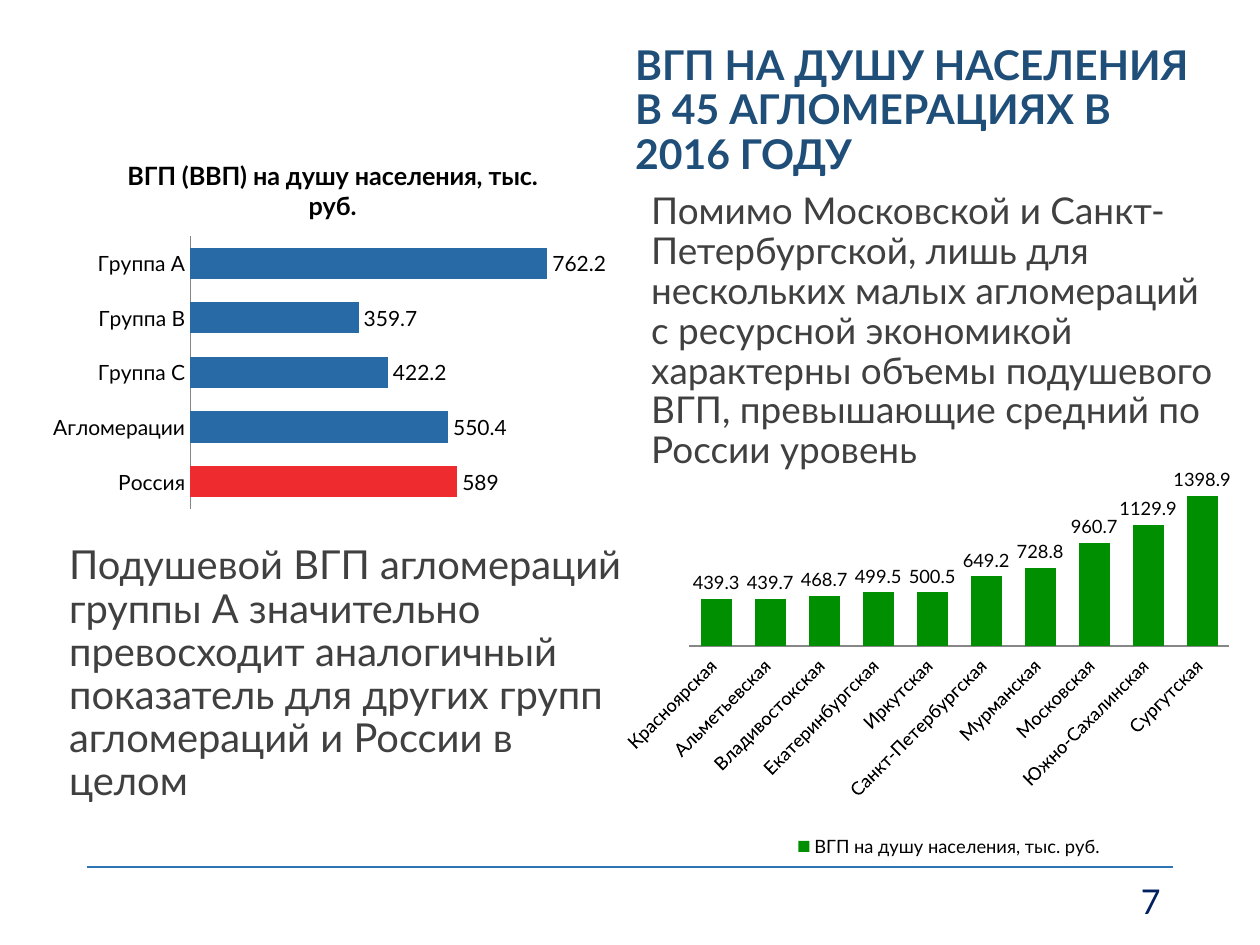
"""Build a slide on gross urban product per head in 45 agglomerations."""
from dataclasses import dataclass

from lxml import etree
from pptx import Presentation
from pptx.chart.chart import Chart
from pptx.chart.data import CategoryChartData
from pptx.dml.color import RGBColor
from pptx.enum.chart import XL_CHART_TYPE, XL_LABEL_POSITION, XL_LEGEND_POSITION, XL_TICK_LABEL_POSITION, XL_TICK_MARK
from pptx.enum.shapes import MSO_CONNECTOR
from pptx.enum.text import MSO_ANCHOR, MSO_AUTO_SIZE, PP_ALIGN
from pptx.oxml import parse_xml
from pptx.oxml.ns import nsdecls, qn
from pptx.util import Inches, Pt

BAR = XL_CHART_TYPE.BAR_CLUSTERED
COLUMN = XL_CHART_TYPE.COLUMN_CLUSTERED
OUTSIDE_END = XL_LABEL_POSITION.OUTSIDE_END
LEGEND_BOTTOM = XL_LEGEND_POSITION.BOTTOM
NEXT_TO_AXIS = XL_TICK_LABEL_POSITION.NEXT_TO_AXIS
NO_TICK = XL_TICK_MARK.NONE
STRAIGHT = MSO_CONNECTOR.STRAIGHT
TOP, MIDDLE = MSO_ANCHOR.TOP, MSO_ANCHOR.MIDDLE
LEFT, RIGHT = PP_ALIGN.LEFT, PP_ALIGN.RIGHT
NO_AUTOFIT = MSO_AUTO_SIZE.NONE

FONT = "Lato"
COLORS = {
    "title": "1F4E79", "body": "404040", "number": "002060", "rule": "2E75B6",
    "chart_text": "000000", "axis": "868686", "group": "276AA6",
    "russia": "EE2B2F", "city": "008F00",
}


@dataclass
class TextBlock:
    text: str
    box: tuple[float, float, float, float]
    size: float
    color: str
    bold: bool = False
    anchor: MSO_ANCHOR = TOP
    align: PP_ALIGN = LEFT
    line_spacing: float = 0.9


@dataclass
class ChartSpec:
    kind: XL_CHART_TYPE
    box: tuple[float, float, float, float]
    series_name: str
    values: dict[str, float]
    color: str
    size: float
    maximum: float


TITLE = TextBlock("ВГП НА ДУШУ НАСЕЛЕНИЯ В 45 АГЛОМЕРАЦИЯХ В 2016 ГОДУ",
                  (4.94, 0.29, 4.8, 1.19), 23.4, "title", bold=True, anchor=MIDDLE)
TEXTS = [
    TextBlock("Подушевой ВГП агломераций группы А значительно превосходит аналогичный "
              "показатель для других групп агломераций и России в целом",
              (0.45, 4.28, 4.62, 2.32), 22.8, "body"),
    TextBlock("Помимо Московской и Санкт-Петербургской, лишь для нескольких малых агломераций "
              "с ресурсной экономикой характерны объемы подушевого ВГП, превышающие средний "
              "по России уровень", (5.07, 1.48, 4.7, 2.44), 21.1, "body"),
    TextBlock("7", (7.06, 6.95, 2.25, 0.4), 19.5, "number",
              anchor=MIDDLE, align=RIGHT, line_spacing=1.0),
]
GROUPS = ChartSpec(
    BAR, (0.33, 1.1, 4.62, 3), "ВГП (ВВП) на душу населения, тыс. руб.",
    {"Россия": 570.1, "Агломерации": 550.4, "Группа С": 422.2,
     "Группа В": 359.7, "Группа А": 762.2}, "group", 12, 900)
CITIES = ChartSpec(
    COLUMN, (4.94, 3.6, 4.83, 3.25), "ВГП на душу населения, тыс. руб.",
    {"Красноярская ": 439.3, "Альметьевская ": 439.7, "Владивостокская ": 468.7,
     "Екатеринбургская ": 499.5, "Иркутская ": 500.5, "Санкт-Петербургская ": 649.2,
     "Мурманская ": 728.8, "Московская ": 960.7, "Южно-Сахалинская ": 1129.9,
     "Сургутская ": 1398.9}, "city", 10.5, 1600)
PLOT_LAYOUT = {"layoutTarget": "inner", "xMode": "edge", "yMode": "edge",
               "x": 0.11, "y": 0.05, "w": 0.89, "h": 0.42}
LEGEND_LAYOUT = {"xMode": "edge", "yMode": "edge", "x": 0.28, "y": 0.92}


def rgb(name: str) -> RGBColor:
    """Return a palette colour."""
    return RGBColor.from_string(COLORS[name])


def style_font(font, size: float, color: str, bold: bool = False) -> None:
    """Set the typeface, size, colour and weight of a font."""
    font.name, font.size, font.bold = FONT, Pt(size), bold
    font.color.rgb = rgb(color)


def fill_text(shape, block: TextBlock) -> None:
    """Place a text shape and format its paragraph."""
    shape.left, shape.top, shape.width, shape.height = map(Inches, block.box)
    frame = shape.text_frame
    frame.text = block.text
    frame.word_wrap, frame.auto_size = True, NO_AUTOFIT
    frame.vertical_anchor = block.anchor
    paragraph = frame.paragraphs[0]
    paragraph.alignment, paragraph.line_spacing = block.align, block.line_spacing
    style_font(paragraph.runs[0].font, block.size, block.color, block.bold)


def set_layout(element, settings: dict[str, str | float], index: int) -> None:
    """Give a chart part a manual layout as its child at the index."""
    for layout in element.findall(qn("c:layout")):
        element.remove(layout)
    values = "".join(f'<c:{tag} val="{value}"/>' for tag, value in settings.items())
    element.insert(index, parse_xml(
        f'<c:layout {nsdecls("c")}><c:manualLayout>{values}</c:manualLayout></c:layout>'))


def add_bars(slide, spec: ChartSpec) -> Chart:
    """Add a single-series chart with value labels and a hidden value axis."""
    data = CategoryChartData(number_format="0.0")
    data.categories = list(spec.values)
    data.add_series(spec.series_name, list(spec.values.values()))
    chart = slide.shapes.add_chart(spec.kind, *map(Inches, spec.box), data).chart
    style_font(chart.font, spec.size, "chart_text")
    chart.has_legend = chart.has_title = False
    value_axis, category_axis = chart.value_axis, chart.category_axis
    value_axis.visible = value_axis.has_major_gridlines = False
    value_axis.minimum_scale, value_axis.maximum_scale = 0, spec.maximum
    value_axis.major_tick_mark = value_axis.minor_tick_mark = NO_TICK
    category_axis.major_tick_mark = category_axis.minor_tick_mark = NO_TICK
    category_axis.tick_label_position = NEXT_TO_AXIS
    category_axis.format.line.color.rgb = rgb("axis")
    category_axis.format.line.width = Pt(0.75)
    plot = chart.plots[0]
    plot.gap_width, plot.vary_by_categories = 75, False
    series = plot.series[0]
    series.format.fill.solid()
    series.format.fill.fore_color.rgb = rgb(spec.color)
    labels = series.data_labels
    labels.show_value, labels.position = True, OUTSIDE_END
    labels.number_format, labels.number_format_is_linked = "0.0", False
    style_font(labels.font, spec.size, "chart_text")
    return chart


def add_groups(slide) -> None:
    """Add the titled group chart with Russia picked out."""
    chart = add_bars(slide, GROUPS)
    chart.has_title = True
    heading = chart.chart_title.text_frame
    heading.text = GROUPS.series_name
    style_font(heading.paragraphs[0].runs[0].font, 14.4, "chart_text", True)
    chart.plots[0].overlap = -25
    russia = chart.plots[0].series[0].points[0]
    russia.format.fill.solid()
    russia.format.fill.fore_color.rgb = rgb("russia")
    caption = russia.data_label.text_frame
    caption.text = "589"
    style_font(caption.paragraphs[0].runs[0].font, GROUPS.size, "chart_text")
    russia.data_label.position = OUTSIDE_END


def add_cities(slide) -> None:
    """Add the city chart with slanted names, a legend and a fixed plot area."""
    chart = add_bars(slide, CITIES)
    chart.has_legend = True
    chart.legend.position, chart.legend.include_in_layout = LEGEND_BOTTOM, False
    style_font(chart.legend.font, CITIES.size, "chart_text")
    category_axis = chart.category_axis
    style_font(category_axis.tick_labels.font, CITIES.size, "chart_text")
    category_axis._element.find(qn("c:txPr")).find(qn("a:bodyPr")).set("rot", "-2700000")
    set_layout(chart._chartSpace.chart.plotArea, PLOT_LAYOUT, 0)
    set_layout(chart.legend._element, LEGEND_LAYOUT, 1)


def add_rule(slide) -> None:
    """Add the footer rule."""
    rule = slide.shapes.add_connector(STRAIGHT, *map(Inches, (0.69, 6.88, 9.31, 6.88)))
    rule.line.color.rgb = rgb("rule")
    rule.line.width = Pt(1.2)
    etree.SubElement(rule._element.spPr, qn("a:effectLst"))


def main() -> None:
    """Build and save the slide."""
    deck = Presentation()
    deck.slide_width, deck.slide_height = Inches(10), Inches(7.5)
    slide = deck.slides.add_slide(deck.slide_layouts[5])
    add_rule(slide)
    fill_text(slide.shapes.title, TITLE)
    add_groups(slide)
    add_cities(slide)
    for block in TEXTS:
        fill_text(slide.shapes.add_textbox(0, 0, 0, 0), block)
    deck.save("out.pptx")


if __name__ == "__main__":
    main()
